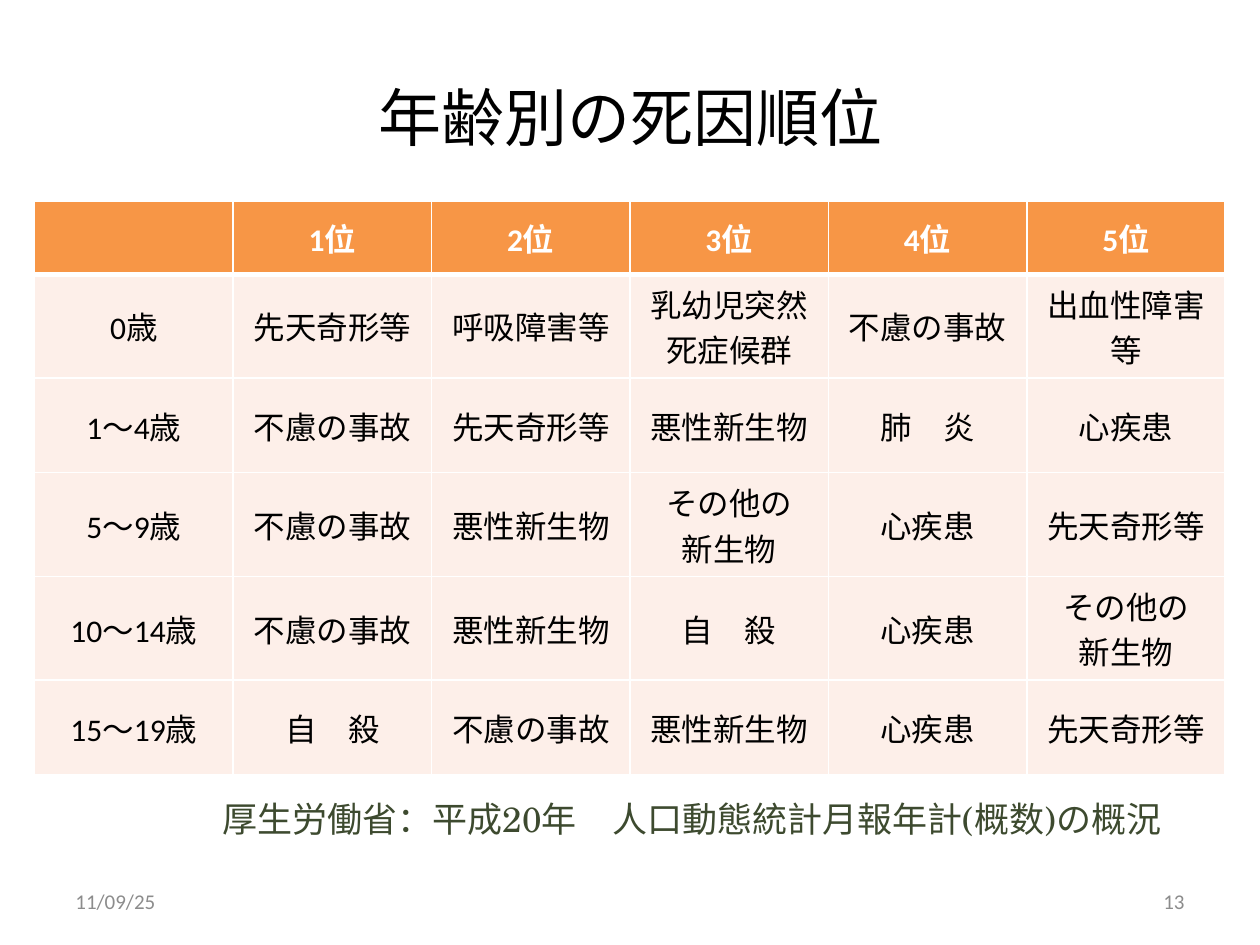
from lxml import etree
from pptx import Presentation
from pptx.dml.color import RGBColor
from pptx.enum.text import MSO_ANCHOR, PP_ALIGN
from pptx.oxml.ns import qn
from pptx.util import Pt

LEFT, CENTER, RIGHT = PP_ALIGN.LEFT, PP_ALIGN.CENTER, PP_ALIGN.RIGHT
TOP, MIDDLE = MSO_ANCHOR.TOP, MSO_ANCHOR.MIDDLE
BLACK = RGBColor(0x00, 0x00, 0x00)
WHITE = RGBColor(0xFF, 0xFF, 0xFF)
ORANGE = RGBColor(0xF7, 0x96, 0x46)
PALE_ORANGE = RGBColor(0xFD, 0xEF, 0xE9)
DARK_GREEN = RGBColor(0x3D, 0x4A, 0x2F)
GRAY = RGBColor(0x8C, 0x8C, 0x8C)
SERIF, SANS = "TeX Gyre Schola", "Calibri"

RANKING = [
    ["", "1位", "2位", "3位", "4位", "5位"],
    ["0歳", "先天奇形等", "呼吸障害等", "乳幼児突然死症候群", "不慮の事故", "出血性障害等"],
    ["1～4歳", "不慮の事故", "先天奇形等", "悪性新生物", "肺　炎", "心疾患"],
    ["5～9歳", "不慮の事故", "悪性新生物", "その他の\n新生物", "心疾患", "先天奇形等"],
    ["10～14歳", "不慮の事故", "悪性新生物", "自　殺", "心疾患", "その他の\n新生物"],
    ["15～19歳", "自　殺", "不慮の事故", "悪性新生物", "心疾患", "先天奇形等"],
]
ROW_HEIGHTS = [41.5, 54, 54, 57, 55.5, 54]


class SlideBuilder:
    def __init__(self, slide):
        self.slide = slide

    def format_text(self, text_frame, size, font, color, align=LEFT, bold=False):
        for paragraph in text_frame.paragraphs:
            paragraph.alignment = align
            for run in paragraph.runs:
                run.font.size = Pt(size)
                run.font.name = font
                run.font.bold = bold
                run.font.color.rgb = color
                if font == SERIF:
                    east_asian = etree.SubElement(run.font._element, qn("a:ea"))
                    east_asian.set("typeface", font)

    def title(self, text, left, top, width, height):
        shape = self.slide.shapes.title
        shape.left, shape.top = Pt(left), Pt(top)
        shape.width, shape.height = Pt(width), Pt(height)
        shape.text_frame.text = text
        shape.text_frame.vertical_anchor = MIDDLE
        self.format_text(shape.text_frame, 36, SERIF, BLACK, CENTER)

    def text(self, text, left, top, width, height, size, font, color,
             align=LEFT, anchor=TOP):
        shape = self.slide.shapes.add_textbox(Pt(left), Pt(top), Pt(width), Pt(height))
        text_frame = shape.text_frame
        text_frame.word_wrap = True
        text_frame.vertical_anchor = anchor
        text_frame.text = text
        self.format_text(text_frame, size, font, color, align)

    def cell_borders(self, cell, top, bottom):
        """Draw white borders; the sides are 1 pt wide."""
        properties = cell._tc.get_or_add_tcPr()
        widths = {"a:lnL": 1, "a:lnR": 1, "a:lnT": top, "a:lnB": bottom}
        for index, (tag, width) in enumerate(widths.items()):
            line = etree.Element(qn(tag), w=str(Pt(width)))
            fill = etree.SubElement(line, qn("a:solidFill"))
            etree.SubElement(fill, qn("a:srgbClr"), val=str(WHITE))
            properties.insert(index, line)

    def table(self, rows, left, top, width, row_heights):
        frame = self.slide.shapes.add_table(
            len(rows), len(rows[0]), Pt(left), Pt(top), Pt(width), Pt(sum(row_heights)))
        table = frame.table
        for column in table.columns:
            column.width = Pt(width / len(rows[0]))
        for row_index, (texts, height) in enumerate(zip(rows, row_heights)):
            table.rows[row_index].height = Pt(height)
            header = row_index == 0
            for column_index, text in enumerate(texts):
                cell = table.cell(row_index, column_index)
                cell.text_frame.text = text
                cell.vertical_anchor = MIDDLE
                cell.fill.solid()
                cell.fill.fore_color.rgb = ORANGE if header else PALE_ORANGE
                self.format_text(cell.text_frame, 18, SANS,
                                 WHITE if header else BLACK, CENTER, header)
                if header:
                    cell.text_frame.paragraphs[0].space_after = Pt(6)
                self.cell_borders(cell, 3 if row_index == 1 else 1, 3 if header else 1)


def main():
    presentation = Presentation()
    presentation.slide_width, presentation.slide_height = Pt(720), Pt(540)
    title_only = presentation.slide_layouts[5]
    builder = SlideBuilder(presentation.slides.add_slide(title_only))
    builder.title("年齢別の死因順位", 36, 21.6, 648, 90)
    builder.table(RANKING, 19.8, 115.2, 680.4, ROW_HEIGHTS)
    builder.text("厚生労働省：平成20年　人口動態統計月報年計(概数)の概況",
                 120, 452, 564, 31.5, 20, SERIF, DARK_GREEN)
    builder.text("11/09/25", 36, 500.5, 168, 28.75, 12, SANS, GRAY, LEFT, MIDDLE)
    builder.text("13", 516, 500.5, 168, 28.75, 12, SANS, GRAY, RIGHT, MIDDLE)
    presentation.save("out.pptx")


if __name__ == "__main__":
    main()
